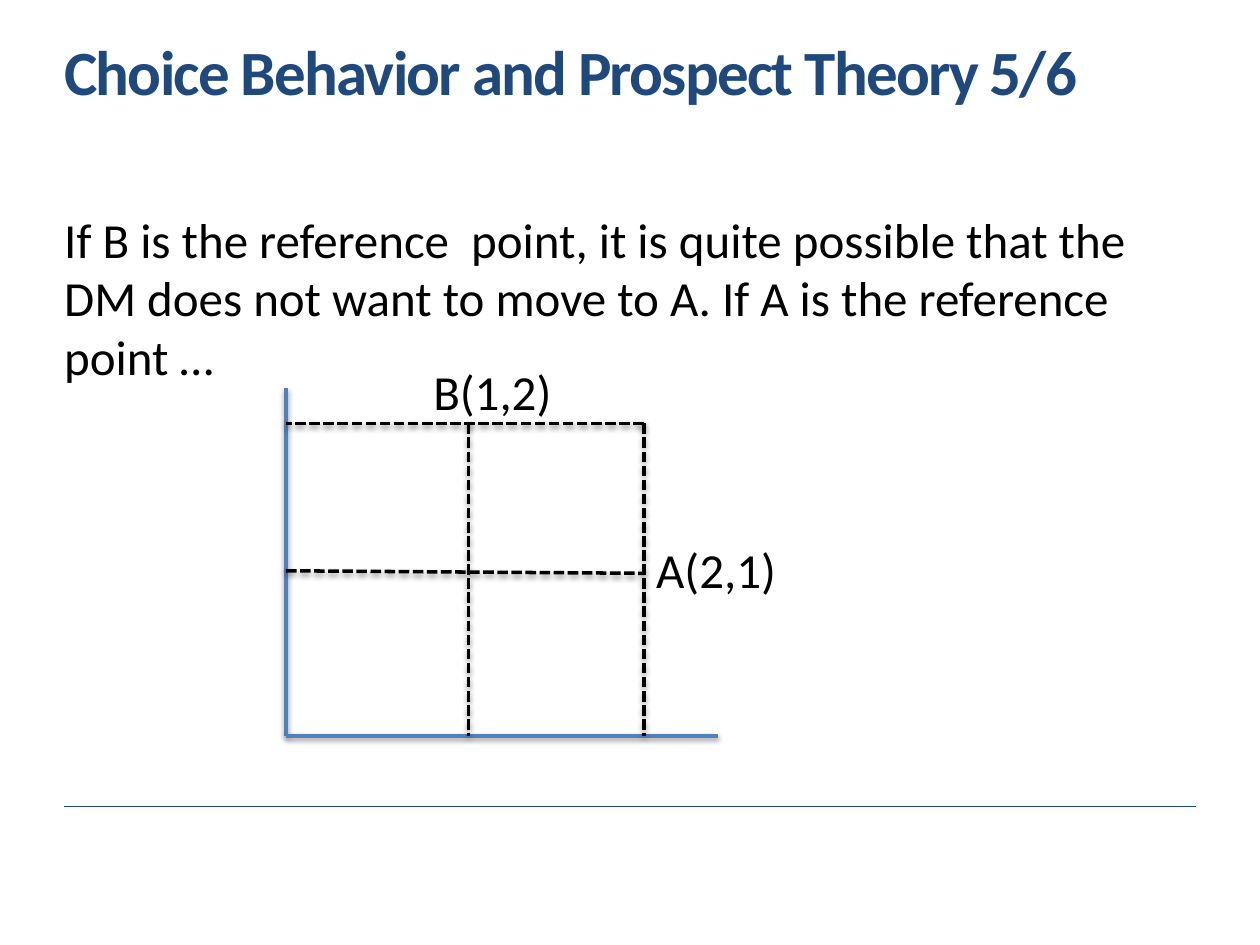
"""Build the prospect theory slide with its reference point diagram."""
from lxml.etree import SubElement
from pptx import Presentation
from pptx.dml.color import RGBColor
from pptx.enum.dml import MSO_LINE
from pptx.enum.shapes import MSO_CONNECTOR
from pptx.oxml.ns import qn
from pptx.util import Inches, Pt


def add_text(text, x, y, w, h, size=28, color="000000", bold=False,
             inset=None, wrap=True, line_spacing=None, spc=None):
    tf = s.shapes.add_textbox(Inches(x), Inches(y), Inches(w), Inches(h)).text_frame
    tf.word_wrap = wrap
    if inset is not None:
        tf.margin_left = tf.margin_right = Inches(inset)
        tf.margin_top = tf.margin_bottom = Inches(inset)
    p = tf.paragraphs[0]
    if line_spacing:
        p.line_spacing = line_spacing
    r = p.add_run()
    r.text = text
    r.font.name = "Calibri"
    r.font.size = Pt(size)
    r.font.bold = bold
    r.font.color.rgb = RGBColor.from_string(color)
    if spc:
        r.font._element.set("spc", str(spc))


def add_line(x1, y1, x2, y2, color="000000", width=2, dash=None, shadow=True):
    c = s.shapes.add_connector(MSO_CONNECTOR.STRAIGHT, Inches(x1), Inches(y1),
                               Inches(x2), Inches(y2))
    c.line.color.rgb = RGBColor.from_string(color)
    c.line.width = Pt(width)
    if dash:
        c.line.dash_style = dash
    effects = SubElement(c._element.spPr, qn("a:effectLst"))
    if shadow:
        outer = SubElement(effects, qn("a:outerShdw"), blurRad=str(Pt(3.1)),
                           dist=str(Pt(1.6)), dir="5400000", rotWithShape="0")
        clr = SubElement(outer, qn("a:srgbClr"), val="000000")
        SubElement(clr, qn("a:alpha"), val="38000")


prs = Presentation()
prs.slide_width, prs.slide_height = Inches(10), Inches(7.5)
s = prs.slides.add_slide(prs.slide_layouts[6])

navy, blue = "1F497D", "4F81BD"
left, width = 0.51, 8.98
x0, x1, x2 = 2.27, 3.72, 5.11
y0, y2 = 5.84, 3.36

add_line(left, 6.4, left + width, 6.4, color=navy, width=1, shadow=False)
add_text("Choice Behavior and Prospect Theory 5/6", left, 0.35, width, 0.94,
         size=36, color=navy, bold=True, inset=0, line_spacing=0.85, spc=-100)
add_text("If B is the reference  point, it is quite possible that the DM does not "
         "want to move to A. If A is the reference point …",
         left, 1.66, width, 4.38, inset=0)

for end in [(x0, 3.08), (5.7, y0)]:
    add_line(x0, y0, *end, color=blue, width=2.25)

for guide in [(x0, 4.53, x2, 4.55), (x1, y2, x1, y0), (x2, y2, x2, y0), (x2, y2, x0, y2)]:
    add_line(*guide, dash=MSO_LINE.SQUARE_DOT)

add_text("B(1,2)", 3.34, 2.82, 1.15, 0.57, wrap=False)
add_text("A(2,1)", x2, 4.23, 1.54, 0.57)

prs.save("out.pptx")
